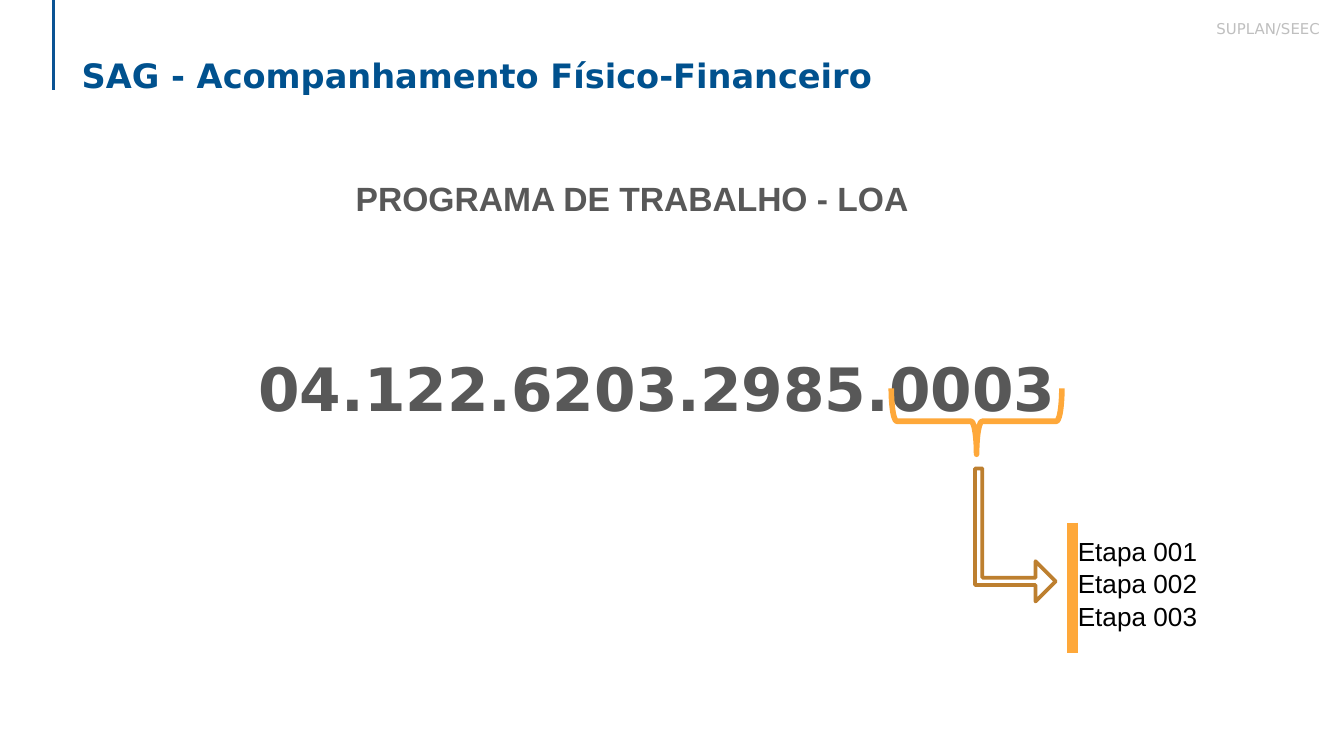
from pptx import Presentation
from pptx.dml.color import RGBColor
from pptx.enum.shapes import MSO_CONNECTOR as Connector, MSO_SHAPE as Shape
from pptx.enum.text import MSO_ANCHOR as Anchor, PP_ALIGN as Align
from pptx.oxml.ns import qn
from pptx.util import Pt

COLORS = {
    "title": "00518E", "rule": "0B5394", "text": "585858", "label": "BFBFBF",
    "orange": "FEA83A", "brown": "BD7F2F", "white": "FFFFFF", "black": "000000",
}


def color(name):
    return RGBColor.from_string(COLORS[name])


def add_text_box(shapes, box, inset=7.2):
    """Add an empty wrapping text box and return its text frame."""
    frame = shapes.add_textbox(*map(Pt, box)).text_frame
    frame.word_wrap = True
    frame.margin_left = frame.margin_right = Pt(7.2)
    frame.margin_top = frame.margin_bottom = Pt(inset)
    return frame


def write(paragraph, text, font, size, color_name, bold=False, align=Align.LEFT):
    paragraph.alignment = align
    run = paragraph.add_run()
    run.text = text
    run.font.name = font
    run.font.size = Pt(size)
    run.font.bold = bold
    run.font.color.rgb = color(color_name)


def add_line(shapes, x, top, bottom, color_name, width):
    line = shapes.add_connector(Connector.STRAIGHT, Pt(x), Pt(top), Pt(x), Pt(bottom))
    line.line.color.rgb = color(color_name)
    line.line.width = Pt(width)
    properties = line._element.spPr
    properties.append(properties.makeelement(qn("a:effectLst"), {}))


def add_turned_shape(shapes, kind, box, color_name, width):
    """Add an outlined shape turned a quarter clockwise."""
    shape = shapes.add_shape(kind, *map(Pt, box))
    shape.rotation = 90
    shape.shadow.inherit = False
    shape.fill.background()
    shape.line.color.rgb = color(color_name)
    shape.line.width = Pt(width)
    return shape


def add_header(slide, box):
    left, top, width, height = box
    # Rule, title with section heading, department label
    add_line(slide.shapes, left + 28.8, top, top + 48.2, "rule", 1.5)
    frame = add_text_box(slide.shapes, (left + 36.7, top + 22.3, 604, 80))
    write(frame.paragraphs[0], "SAG - Acompanhamento Físico-Financeiro",
          "DejaVu Sans", 18, "title", bold=True)
    heading = frame.add_paragraph()
    heading.space_before = Pt(44)
    write(heading, "PROGRAMA DE TRABALHO - LOA", "Arial", 18, "text",
          bold=True, align=Align.CENTER)
    label = add_text_box(slide.shapes, (left + width - 123.1, top + 5.8, 117.4, 32.4))
    write(label.paragraphs[0], "SUPLAN/SEEC", "DejaVu Sans", 8, "label", align=Align.RIGHT)


def add_program_code(slide, box):
    left, top, width, height = box
    frame = add_text_box(slide.shapes, box)
    frame.margin_left = Pt(16)
    frame.margin_bottom = Pt(10)
    frame.vertical_anchor = Anchor.MIDDLE
    write(frame.paragraphs[0], "04.122.6203.2985.0003", "DejaVu Sans", 32, "text",
          bold=True, align=Align.CENTER)
    # Brace under the last four digits
    add_turned_shape(slide.shapes, Shape.RIGHT_BRACE,
                     (left + 409.7, top + 39.6, 35.3, 91.4), "orange", 3)


def add_stages(slide, box):
    left, top, width, height = box
    # Arrow from the brace to the list
    arrow = add_turned_shape(slide.shapes, Shape.BENT_UP_ARROW,
                             (left, top, 71.3, 43.2), "brown", 2)
    arrow.fill.solid()
    arrow.fill.fore_color.rgb = color("white")
    for index, value in enumerate((0.09, 0.25, 0.25)):
        arrow.adjustments[index] = value
    # Stage list with its side bar
    shapes = slide.shapes.add_group_shape().shapes
    add_line(shapes, left + 66.3, top + 15, top + height, "orange", 6)
    frame = add_text_box(shapes, (left + 62, top + 17.2, width - 62, 65.5), inset=3.6)
    for number in range(1, 4):
        paragraph = frame.paragraphs[0] if number == 1 else frame.add_paragraph()
        paragraph.line_spacing = 1.05
        write(paragraph, f"Etapa {number:03}", "Arial", 14, "black")


def main():
    presentation = Presentation()
    presentation.slide_width, presentation.slide_height = Pt(720), Pt(405)
    slide = presentation.slides.add_slide(presentation.slide_layouts[6])
    add_header(slide, (0, 0, 720, 102))
    add_program_code(slide, (95.8, 140.4, 504, 137.5))
    add_stages(slide, (508.3, 265, 192.3, 85))
    presentation.save("out.pptx")


if __name__ == "__main__":
    main()
